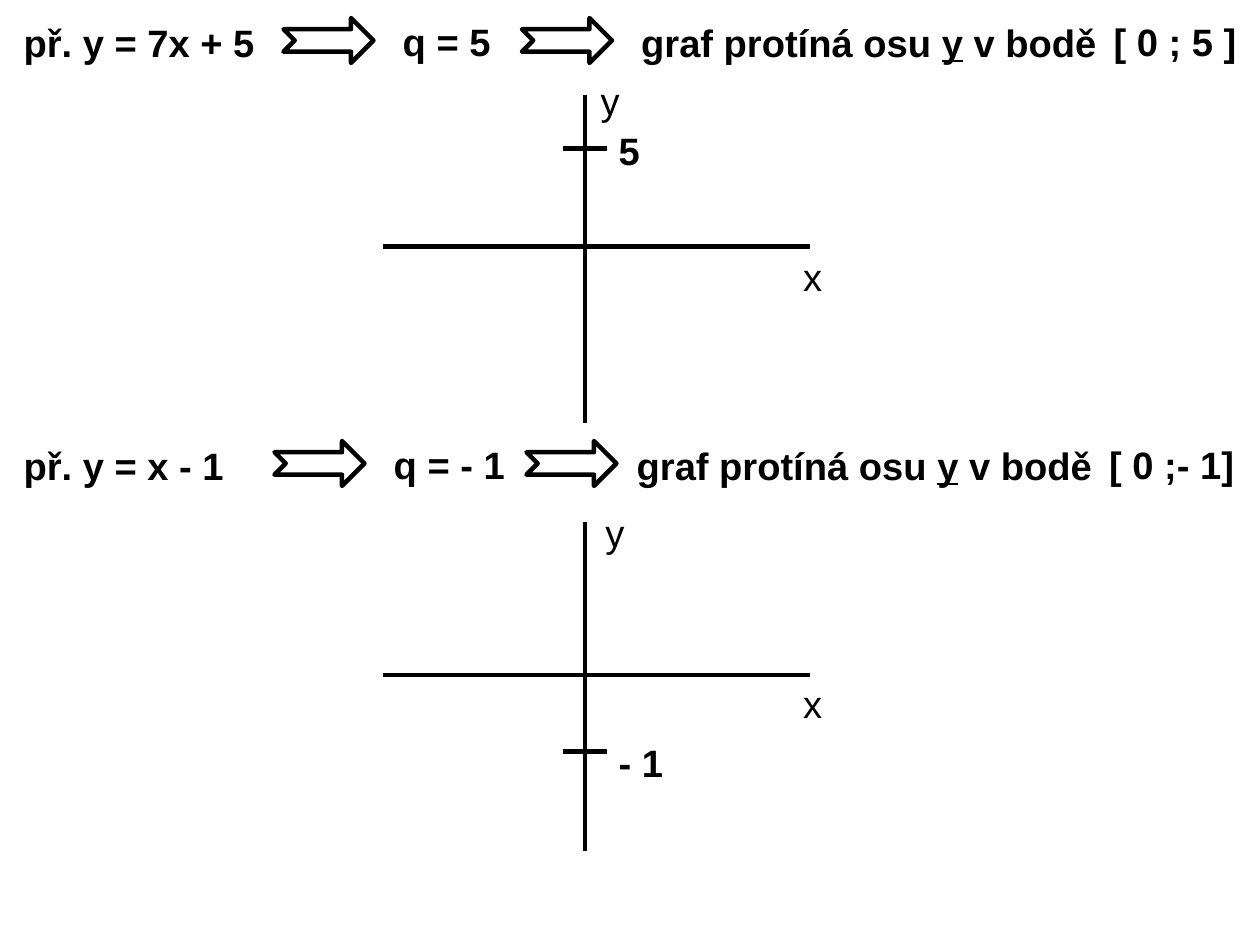
from lxml.etree import SubElement
from pptx import Presentation
from pptx.dml.color import RGBColor
from pptx.enum.shapes import MSO_CONNECTOR, MSO_SHAPE
from pptx.enum.text import MSO_AUTO_SIZE
from pptx.oxml.ns import qn
from pptx.util import Pt

PX = 9000
BLACK = "000000"
LINE_WIDTH = Pt(2.83)

presentation = Presentation()
presentation.slide_width = 1120 * PX
presentation.slide_height = 840 * PX
slide = presentation.slides.add_slide(presentation.slide_layouts[6])


def write_text(text, left, top, width, height=50, bold=True, size=24, font="Arial", color=BLACK):
    box = slide.shapes.add_textbox(left * PX, top * PX, width * PX, height * PX)
    frame = box.text_frame
    frame.word_wrap = False
    frame.auto_size = MSO_AUTO_SIZE.SHAPE_TO_FIT_TEXT
    for index, part in enumerate(text.split("_")):
        run = frame.paragraphs[0].add_run()
        run.text = part
        run.font.name = font
        run.font.size = Pt(size)
        run.font.bold = bold
        run.font.underline = index % 2 == 1
        run.font.color.rgb = RGBColor.from_string(color)


def draw_line(x1, y1, x2, y2, color=BLACK):
    line = slide.shapes.add_connector(
        MSO_CONNECTOR.STRAIGHT, x1 * PX, y1 * PX, x2 * PX, y2 * PX)
    line.line.width = LINE_WIDTH
    line.line.color.rgb = RGBColor.from_string(color)
    SubElement(line._element.spPr, qn("a:effectLst"))


examples = [
    {"top": 11, "equation": ("př. y = 7x + 5", 228), "intercept": ("q = 5", 348, 100),
     "arrows": (252, 464), "sentence_left": 560, "point": ("[ 0 ; 5 ]", 980, 130),
     "axis_top": 84, "axis_y": 219, "x_top": 220, "y_label": (524, 64),
     "tick_y": 132, "tick_label": ("5", 108, 40)},
    {"top": 387, "equation": ("př. y = x - 1", 200), "intercept": ("q = - 1", 340, 120),
     "arrows": (244, 468), "sentence_left": 556, "point": ("[ 0 ;- 1]", 976, 132),
     "axis_top": 464, "axis_y": 600, "x_top": 600, "y_label": (528, 448),
     "tick_y": 668, "tick_label": ("- 1", 652, 60)},
]

for example in examples:
    top = example["top"]

    equation, width = example["equation"]
    write_text(equation, 11, top + 1, width)
    for text, left, width in (example["intercept"], example["point"]):
        write_text(text, left, top, width)
    write_text("graf protíná osu _y_ v bodě", example["sentence_left"], top + 1, 434, 49)

    for left in example["arrows"]:
        arrow = slide.shapes.add_shape(
            MSO_SHAPE.NOTCHED_RIGHT_ARROW, left * PX, (top + 5) * PX, 80 * PX, 40 * PX)
        arrow.shadow.inherit = False
        arrow.fill.background()
        arrow.line.width = LINE_WIDTH
        arrow.line.color.rgb = RGBColor.from_string(BLACK)

    axis_top, axis_y, tick_y = example["axis_top"], example["axis_y"], example["tick_y"]
    draw_line(520, axis_top, 520, axis_top + 292)
    draw_line(340, axis_y, 720, axis_y)
    draw_line(500, tick_y, 540, tick_y)

    write_text("x", 704, example["x_top"], 37, 48, bold=False)
    write_text("y", *example["y_label"], 37, 48, bold=False)
    tick_text, tick_top, tick_width = example["tick_label"]
    write_text(tick_text, 540, tick_top, tick_width)

presentation.save("out.pptx")
